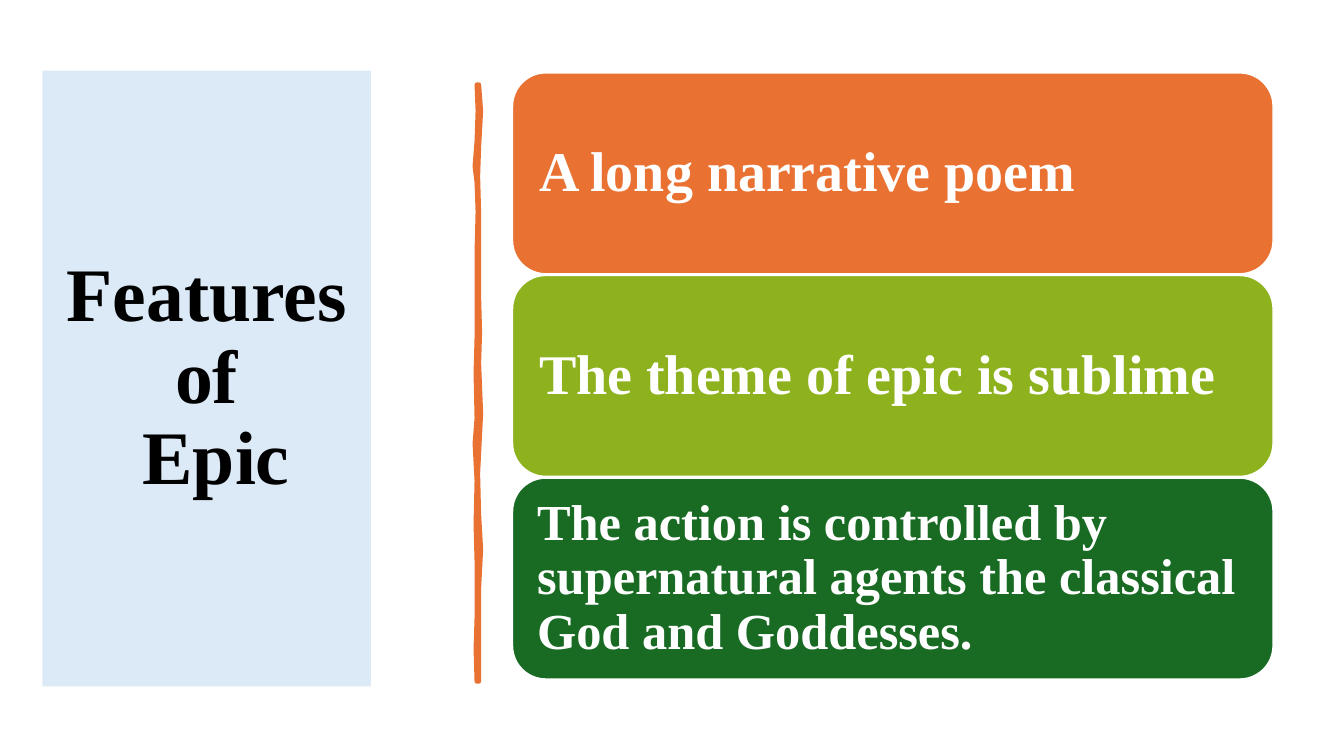
from dataclasses import dataclass

from pptx import Presentation
from pptx.dml.color import RGBColor
from pptx.enum.shapes import MSO_SHAPE
from pptx.enum.text import MSO_ANCHOR, PP_ALIGN
from pptx.util import Inches, Pt

RECTANGLE = MSO_SHAPE.RECTANGLE
ROUNDED = MSO_SHAPE.ROUNDED_RECTANGLE
MIDDLE = MSO_ANCHOR.MIDDLE
LEFT, CENTER = PP_ALIGN.LEFT, PP_ALIGN.CENTER


@dataclass(frozen=True)
class Theme:
    font: str = "Times New Roman"
    black: str = "000000"
    white: str = "FFFFFF"
    pale_blue: str = "DCEAF7"
    orange: str = "E97132"
    lime: str = "8EB21E"
    green: str = "196B24"
    title_size: int = 54
    card_size: int = 40
    small_card_size: int = 36


THEME = Theme()

# Feature cards: text, fill, type size, inset
CARDS = [
    ("A long narrative poem", THEME.orange, THEME.card_size, 0.17),
    ("The theme of epic is sublime", THEME.lime, THEME.card_size, 0.17),
    ("The action is controlled by supernatural agents the classical God and Goddesses.",
     THEME.green, THEME.small_card_size, 0.15),
]
CARD_LEFT, CARD_TOP, CARD_WIDTH, CARD_HEIGHT, CARD_PITCH = 5.08, 0.72, 7.55, 2, 2.01

# Hand-drawn divider: down the right edge, then up the left edge
DIVIDER_EDGE = [
    (4.75, 0.84), (4.77, 1.1), (4.75, 1.46), (4.74, 1.75), (4.75, 2.1),
    (4.75, 2.94), (4.76, 3.3), (4.75, 3.6), (4.77, 4.1), (4.75, 4.5),
    (4.74, 4.7), (4.75, 5.1), (4.77, 5.45), (4.75, 5.84), (4.75, 6.76),
    (4.73, 6.76), (4.72, 6.44), (4.73, 6.13), (4.73, 5.57), (4.72, 5.2),
    (4.73, 4.77), (4.71, 4.4), (4.73, 4.15), (4.72, 3.7), (4.73, 3.35),
    (4.73, 2.5), (4.74, 2.1), (4.73, 1.81), (4.71, 1.65), (4.73, 1.4),
    (4.74, 1.1), (4.73, 0.84),
]


def paint(shape, fill, line=None, weight=0):
    shape.shadow.inherit = False
    shape.fill.solid()
    shape.fill.fore_color.rgb = RGBColor.from_string(fill)
    if line is None:
        shape.line.fill.background()
    else:
        shape.line.color.rgb = RGBColor.from_string(line)
        shape.line.width = Pt(weight)


def write(shape, text, size, color, align, inset_x, inset_y):
    frame = shape.text_frame
    frame_format = {
        "word_wrap": True, "vertical_anchor": MIDDLE,
        "margin_left": Inches(inset_x), "margin_right": Inches(inset_x),
        "margin_top": Inches(inset_y), "margin_bottom": Inches(inset_y),
    }
    for name, value in frame_format.items():
        setattr(frame, name, value)
    frame.text = text
    for para in frame.paragraphs:
        para.alignment = align
        para.line_spacing = 0.9
        for span in para.runs:
            for name, value in {"name": THEME.font, "size": Pt(size), "bold": True}.items():
                setattr(span.font, name, value)
            span.font.color.rgb = RGBColor.from_string(color)


def add_box(page, kind, left, top, width, height):
    return page.shapes.add_shape(
        kind, Inches(left), Inches(top), Inches(width), Inches(height))


def add_title(page):
    box = add_box(page, RECTANGLE, 0.42, 0.7, 3.26, 6.11)
    paint(box, THEME.pale_blue)
    write(box, "Features of\n Epic", THEME.title_size, THEME.black, CENTER, 0.1, 0.05)


def add_divider(page):
    start, *rest = [(Inches(x), Inches(y)) for x, y in DIVIDER_EDGE]
    builder = page.shapes.build_freeform(*start)
    builder.add_line_segments(rest, close=True)
    paint(builder.convert_to_shape(), THEME.orange, THEME.orange, 3.25)


def add_card(page, row, text, fill, size, inset):
    box = add_box(page, ROUNDED, CARD_LEFT, CARD_TOP + row * CARD_PITCH,
                  CARD_WIDTH, CARD_HEIGHT)
    paint(box, fill, THEME.white, 1.5)
    write(box, text, size, THEME.white, LEFT, inset, inset)


def main():
    deck = Presentation()
    deck.slide_width, deck.slide_height = Inches(13.33), Inches(7.5)
    page = deck.slides.add_slide(deck.slide_layouts[6])

    # Title panel and divider
    add_title(page)
    add_divider(page)

    # Feature cards
    for row, card in enumerate(CARDS):
        add_card(page, row, *card)

    deck.save("out.pptx")


if __name__ == "__main__":
    main()
